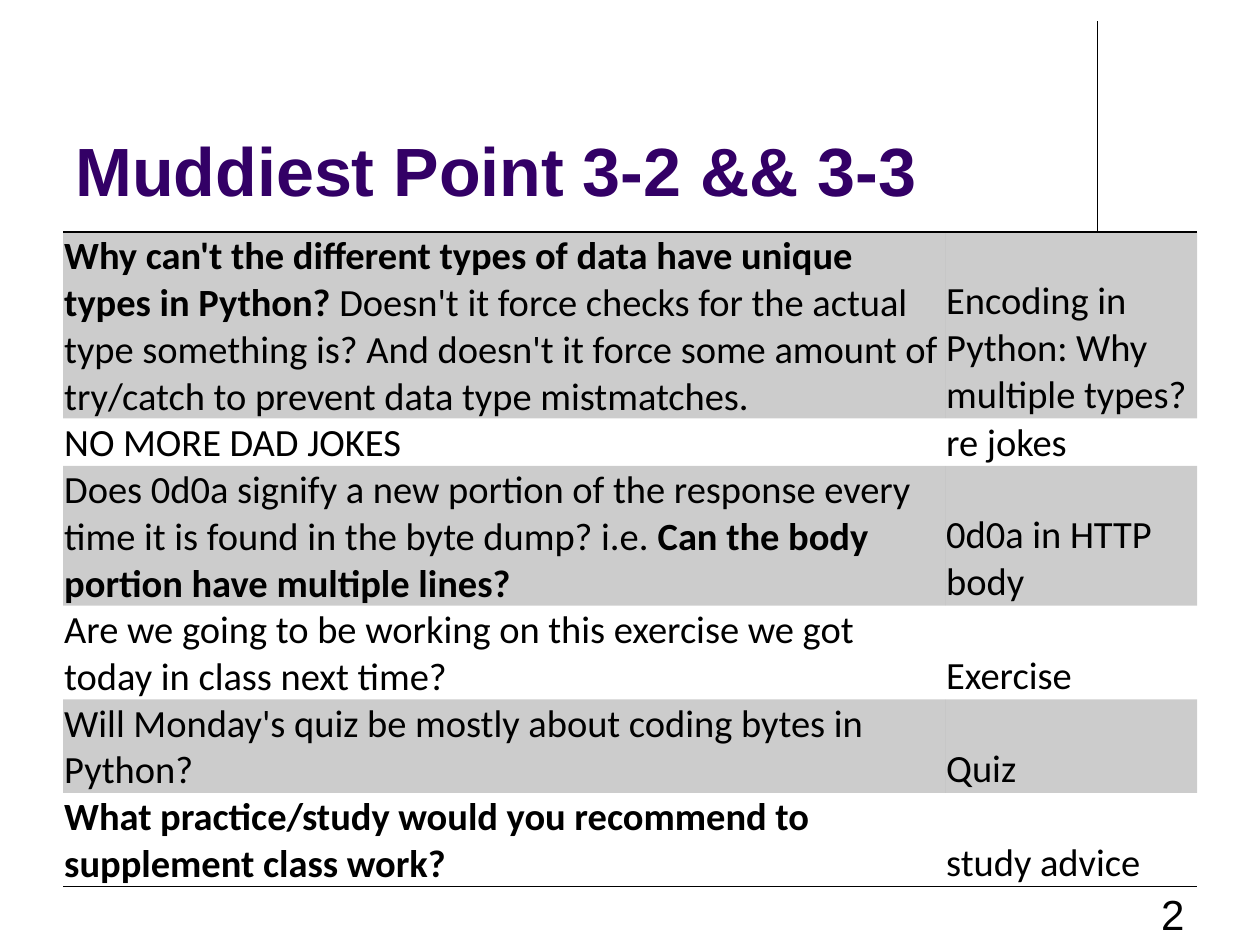
from lxml import etree
from pptx import Presentation
from pptx.dml.color import RGBColor
from pptx.enum.shapes import MSO_CONNECTOR
from pptx.enum.text import MSO_ANCHOR as Anchor, PP_ALIGN as Align
from pptx.oxml import parse_xml
from pptx.oxml.ns import nsdecls, qn
from pptx.util import Inches, Pt

BLACK, PURPLE = "000000", "330066"
MARGIN, LINE_HEIGHT = 0.5, 0.37
COLUMNS = (7, 2)
NO_STYLE = "{2D5ABB26-0587-4C30-8999-92F81FD0307C}"

# Text lines in the row, question as (text, bold) runs, topic
QUESTIONS = [
    (4, [("Why can't the different types of data have unique types in Python? ", True),
         ("Doesn't it force checks for the actual type something is? And doesn't it force "
          "some amount of try/catch to prevent data type mistmatches.", False)],
     "Encoding in Python: Why multiple types?"),
    (1, [("NO MORE DAD JOKES", False)], "re jokes"),
    (3, [("Does 0d0a signify a new portion of the response every time it is found in "
          "the byte dump? i.e. ", False),
         ("Can the body portion have multiple lines?", True)],
     "0d0a in HTTP body"),
    (2, [("Are we going to be working on this exercise we got today in class next time?",
          False)], "Exercise"),
    (2, [("Will Monday's quiz be mostly about coding bytes in Python?", False)], "Quiz"),
    (2, [("What practice/study would you recommend to supplement class work?", True)],
     "study advice"),
]


def color(hex_string):
    return RGBColor.from_string(hex_string)


def set_font(font, name, size, hex_string, bold=None):
    font.name, font.size, font.bold = name, Pt(size), bold
    font.color.rgb = color(hex_string)


def add_text(s, text, box, size, hex_string, bold=False, anchor=Anchor.TOP, align=Align.LEFT):
    tf = s.shapes.add_textbox(*map(Inches, box)).text_frame
    tf.word_wrap, tf.vertical_anchor = True, anchor
    p = tf.paragraphs[0]
    p.text, p.alignment = text, align
    set_font(p.font, "Arial", size, hex_string, bold)


def add_rule(s, x, top, bottom):
    line = s.shapes.add_connector(MSO_CONNECTOR.STRAIGHT, *map(Inches, (x, top, x, bottom)))
    line.line.color.rgb, line.line.width = color(BLACK), Pt(0.75)
    etree.SubElement(line._element.spPr, qn("a:effectLst"))


def shade(cell):
    """Fill the cell with black at 20 % opacity."""
    cell.fill.solid()
    cell.fill.fore_color.rgb = color(BLACK)
    rgb = cell._tc.tcPr.find(".//" + qn("a:srgbClr"))
    etree.SubElement(rgb, qn("a:alpha"), val="20000")


def add_border(cell, side):
    cell._tc.get_or_add_tcPr().insert(0, parse_xml(
        f'<a:{side} {nsdecls("a")} w="12700"><a:solidFill><a:srgbClr val="{BLACK}"/>'
        f'</a:solidFill></a:{side}>'))


def fill_cell(cell, runs):
    cell.margin_left = cell.margin_right = cell.margin_top = Inches(0.01)
    cell.margin_bottom = 0
    cell.vertical_anchor = Anchor.BOTTOM
    p = cell.text_frame.paragraphs[0]
    set_font(p.font, "Calibri", 22, BLACK)
    for text, bold in runs:
        r = p.add_run()
        r.text, r.font.bold = text, bold


def add_questions(s, top):
    height = LINE_HEIGHT * sum(lines for lines, *_ in QUESTIONS)
    table = s.shapes.add_table(len(QUESTIONS), len(COLUMNS), *map(
        Inches, (MARGIN, top, sum(COLUMNS), height))).table
    table.first_row = table.horz_banding = False
    table._tbl.tblPr.find(qn("a:tableStyleId")).text = NO_STYLE
    for column, width in zip(table.columns, COLUMNS):
        column.width = Inches(width)
    last = len(QUESTIONS) - 1
    for i, (lines, question, topic) in enumerate(QUESTIONS):
        table.rows[i].height = Inches(lines * LINE_HEIGHT)
        for cell, runs in zip(table.rows[i].cells, (question, [(topic, False)])):
            fill_cell(cell, runs)
            if i % 2 == 0:
                shade(cell)
            else:
                cell.fill.background()
            if i == 0:
                add_border(cell, "lnT")
            if i == last:
                add_border(cell, "lnB")


def main():
    prs = Presentation()
    prs.slide_width, prs.slide_height = Inches(10), Inches(7.5)
    s = prs.slides.add_slide(prs.slide_layouts[6])
    add_rule(s, 8.71, 0.17, 1.83)
    add_text(s, "Muddiest Point 3-2 && 3-3", (MARGIN, 0.3, 8.25, 1.42), 39, PURPLE,
             bold=True, anchor=Anchor.BOTTOM)
    add_questions(s, 1.84)
    add_text(s, "2", (7.17, 7, 2.33, 0.5), 24, BLACK, align=Align.RIGHT)
    prs.save("out.pptx")


if __name__ == "__main__":
    main()
